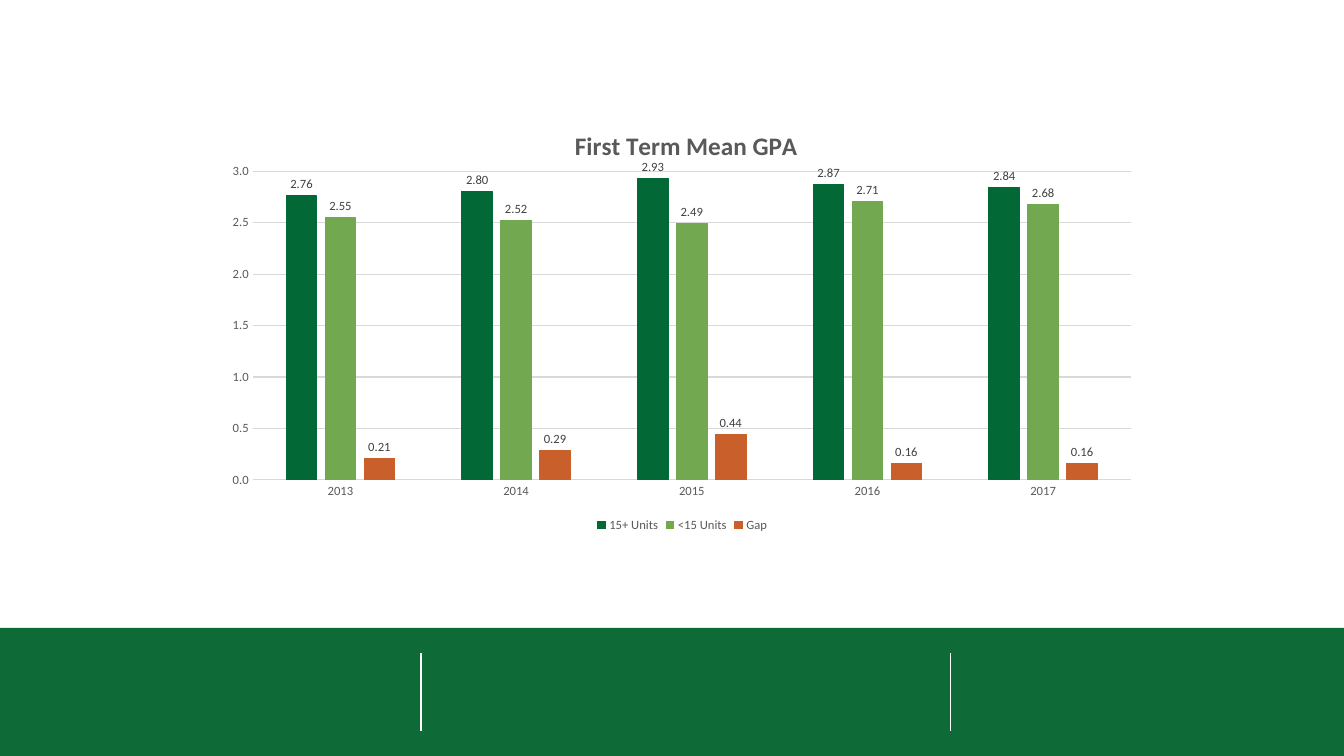
from dataclasses import dataclass

from lxml import etree
from pptx import Presentation
from pptx import util as u
from pptx.chart.data import CategoryChartData
from pptx.dml.color import RGBColor
from pptx.enum import chart as ch, shapes
from pptx.oxml.ns import qn

PX = 9525  # EMU per px, 96 px to the inch
WIDE, HIGH = 1280, 720
FONT = "Calibri"

GREEN = RGBColor(0x0E, 0x6A, 0x37)
WHITE = RGBColor(0xFF, 0xFF, 0xFF)
DARK = RGBColor(0x01, 0x68, 0x36)
LIGHT = RGBColor(0x72, 0xA8, 0x4F)
RUST = RGBColor(0xC9, 0x60, 0x2C)
GRID = RGBColor(0xD9, 0xD9, 0xD9)
GRAY = RGBColor(0x59, 0x59, 0x59)
LABEL = RGBColor(0x40, 0x40, 0x40)


@dataclass
class Box:
    x: int
    y: int
    w: int
    h: int

    def emu(self) -> list:
        return [u.Emu(n * PX) for n in (self.x, self.y, self.w, self.h)]


@dataclass
class Group:
    name: str
    color: RGBColor
    means: tuple


BAND = Box(0, 598, WIDE, 122)
RULES = [Box(x, 622, 0, 74) for x in (401, 905)]
PLOT = Box(205, 97, 890, 414)
YEARS = [str(year) for year in range(2013, 2018)]
GROUPS = [
    Group("15+ Units", DARK, (2.76, 2.80, 2.93, 2.87, 2.84)),
    Group("<15 Units", LIGHT, (2.55, 2.52, 2.49, 2.71, 2.68)),
    Group("Gap", RUST, (0.21, 0.29, 0.44, 0.16, 0.16)),
]


def style(font, size: int, color: RGBColor, bold: bool = False) -> None:
    font.name, font.size, font.bold = FONT, u.Pt(size), bold
    font.color.rgb = color


def stroke(line, color: RGBColor) -> None:
    line.color.rgb = color
    line.width = u.Pt(0.75)


def place(part, index: int, **spots) -> None:
    """Pin a chart part at fractions of the chart area."""
    for old in part.findall(qn("c:layout")):
        part.remove(old)
    lay = etree.Element(qn("c:layout"))
    part.insert(index, lay)
    man = etree.SubElement(lay, qn("c:manualLayout"))
    if "w" in spots:
        etree.SubElement(man, qn("c:layoutTarget")).set("val", "inner")
    for key in ("x", "y"):
        etree.SubElement(man, qn(f"c:{key}Mode")).set("val", "edge")
    for key, spot in spots.items():
        etree.SubElement(man, qn(f"c:{key}")).set("val", str(spot))


def add_band(slide, box: Box) -> None:
    band = slide.shapes.add_shape(shapes.MSO_SHAPE.RECTANGLE, *box.emu())
    band.shadow.inherit = False
    band.fill.solid()
    band.fill.fore_color.rgb = GREEN
    band.line.fill.background()


def add_rule(slide, box: Box) -> None:
    x, y, w, h = box.emu()
    rule = slide.shapes.add_connector(
        shapes.MSO_CONNECTOR.STRAIGHT, x, y, x + w, y + h)
    stroke(rule.line, WHITE)
    etree.SubElement(rule.element.spPr, qn("a:effectLst"))


def add_bars(slide, box: Box, groups: list) -> None:
    data = CategoryChartData(number_format="0.00")
    data.categories = YEARS
    for group in groups:
        data.add_series(group.name, group.means)
    chart = slide.shapes.add_chart(
        ch.XL_CHART_TYPE.COLUMN_CLUSTERED, *box.emu(), data).chart
    style(chart.font, 10, GRAY)

    # Title and legend
    chart.has_title = True
    run = chart.chart_title.text_frame.paragraphs[0].add_run()
    run.text = "First Term Mean GPA"
    style(run.font, 18, GRAY, True)
    chart.has_legend = True
    chart.legend.position = ch.XL_LEGEND_POSITION.BOTTOM
    chart.legend.include_in_layout = False
    style(chart.legend.font, 9, GRAY)

    # Axes
    years, means = chart.category_axis, chart.value_axis
    for axis in (years, means):
        axis.major_tick_mark = ch.XL_TICK_MARK.NONE
        axis.minor_tick_mark = ch.XL_TICK_MARK.NONE
        style(axis.tick_labels.font, 9, GRAY)
    stroke(years.format.line, GRID)
    means.format.line.fill.background()
    means.minimum_scale, means.maximum_scale = 0, 3
    means.major_unit = 0.5
    means.tick_labels.number_format = "0.0"
    means.tick_labels.number_format_is_linked = False
    stroke(means.major_gridlines.format.line, GRID)

    # Bars and their labels
    plot = chart.plots[0]
    plot.gap_width, plot.overlap = 219, -27
    plot.vary_by_categories = False
    for bars, group in zip(plot.series, groups):
        bars.format.fill.solid()
        bars.format.fill.fore_color.rgb = group.color
        stroke(bars.format.line, group.color)
        tags = bars.data_labels
        tags.show_value = True
        tags.number_format = "0.00"
        tags.number_format_is_linked = False
        tags.position = ch.XL_LABEL_POSITION.OUTSIDE_END
        style(tags.font, 9, LABEL)

    root = chart.element.find(qn("c:chart"))
    place(root.find(qn("c:title")), 1, x=0.38, y=0.05)
    place(root.find(qn("c:plotArea")), 0, x=0.04, y=0.16, w=0.94, h=0.71)


def main() -> None:
    deck = Presentation()
    deck.slide_width, deck.slide_height = u.Emu(WIDE * PX), u.Emu(HIGH * PX)
    slide = deck.slides.add_slide(deck.slide_layouts[6])
    # Footer band with its dividers
    add_band(slide, BAND)
    for rule in RULES:
        add_rule(slide, rule)
    # Chart
    add_bars(slide, PLOT, GROUPS)
    deck.save("out.pptx")


if __name__ == "__main__":
    main()
